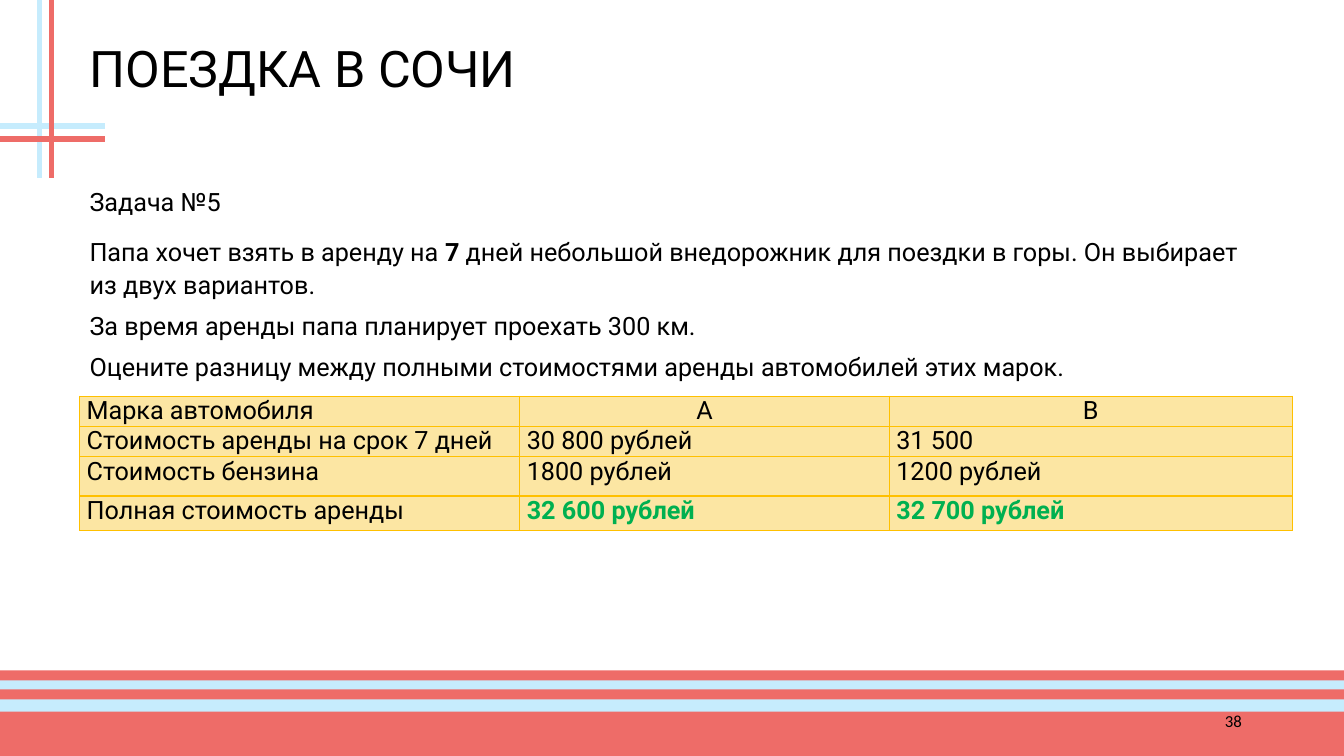
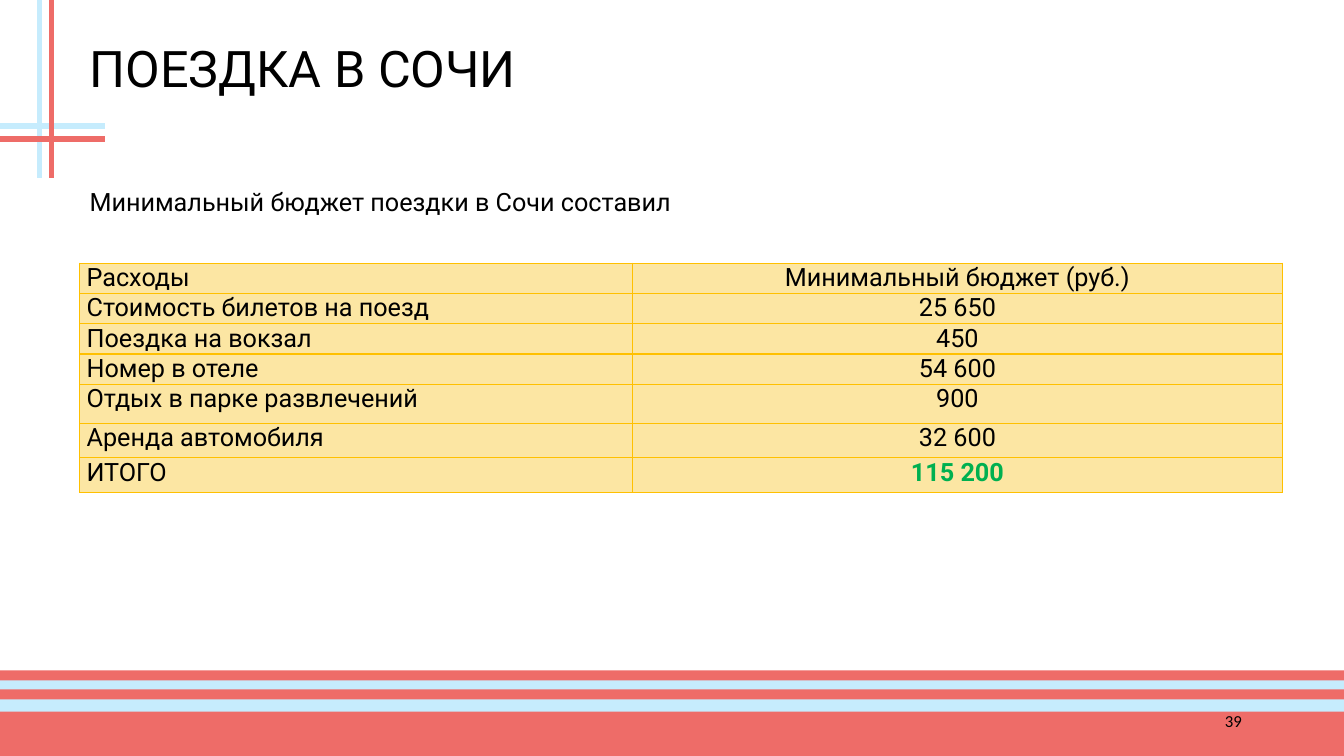
"""Builds two slides about the budget of a trip to Sochi."""
from lxml import etree
from pptx import Presentation
from pptx.dml.color import RGBColor
from pptx.enum.shapes import MSO_CONNECTOR, MSO_SHAPE
from pptx.enum.text import MSO_ANCHOR, PP_ALIGN
from pptx.oxml.ns import qn
from pptx.util import Pt

RECTANGLE = MSO_SHAPE.RECTANGLE
STRAIGHT = MSO_CONNECTOR.STRAIGHT
TOP, MIDDLE = MSO_ANCHOR.TOP, MSO_ANCHOR.MIDDLE
LEFT, CENTER, RIGHT = PP_ALIGN.LEFT, PP_ALIGN.CENTER, PP_ALIGN.RIGHT
BORDER_TAGS = ("a:lnL", "a:lnR", "a:lnT", "a:lnB")


def rgb(value):
    return RGBColor.from_string(value)


def write_text(paragraph, text, size=18, font="Roboto", color="000000", bold_color="000000",
               align=LEFT, line_spacing=1.0, before=0, after=0):
    paragraph.alignment = align
    paragraph.line_spacing = line_spacing
    paragraph.space_before, paragraph.space_after = Pt(before), Pt(after)
    for index, part in enumerate(text.split("**")):
        if part:
            bold = index % 2 == 1
            run = paragraph.add_run()
            run.text = part
            run.font.size, run.font.name, run.font.bold = Pt(size), font, bold
            run.font.color.rgb = rgb(bold_color if bold else color)


class Deck:
    CORAL, SKY = "EE6C68", "C6ECFD"
    CELL, BORDER, RESULT = "FCE6A3", "FFC000", "00B050"
    WIDTH, HEIGHT = 960, 540
    MARGIN, CONTENT_WIDTH = 56.9, 837.4

    def __init__(self):
        self.presentation = Presentation()
        self.presentation.slide_width = Pt(self.WIDTH)
        self.presentation.slide_height = Pt(self.HEIGHT)
        self.slide = None

    def new_slide(self, title, number):
        self.slide = self.presentation.slides.add_slide(self.presentation.slide_layouts[6])
        self.band(479.5, self.HEIGHT - 479.5, self.SKY)
        self.band(508.3, self.HEIGHT - 508.3, self.CORAL)
        for top in (492.5, 478.8):
            self.band(top, 7.2, self.CORAL)
        for color, x, y in ((self.SKY, 28.1, 90), (self.CORAL, 36.7, 99.4)):
            self.line(0, y, 74.9, y, color)
            self.line(x, 0, x, 127.4, color)
        self.text(678.2, 500.4, 216, 28.8, [(str(number), {})], anchor=MIDDLE,
                  size=12, font="Calibri", align=RIGHT)
        self.text(self.MARGIN, 28.1, self.CONTENT_WIDTH, 52.6, [(title, {})],
                  size=36, line_spacing=0.9)

    def band(self, top, height, color):
        shape = self.slide.shapes.add_shape(RECTANGLE, 0, Pt(top), Pt(self.WIDTH), Pt(height))
        shape.shadow.inherit = False
        shape.fill.solid()
        shape.fill.fore_color.rgb = rgb(color)
        shape.line.fill.background()

    def line(self, x1, y1, x2, y2, color):
        connector = self.slide.shapes.add_connector(STRAIGHT, Pt(x1), Pt(y1), Pt(x2), Pt(y2))
        connector.line.color.rgb = rgb(color)
        connector.line.width = Pt(4)
        properties = connector._element.find(qn("p:spPr"))
        etree.SubElement(properties, qn("a:effectLst"))

    def text(self, left, top, width, height, paragraphs, anchor=TOP, **style):
        box = self.slide.shapes.add_textbox(Pt(left), Pt(top), Pt(width), Pt(height))
        frame = box.text_frame
        frame.word_wrap = True
        frame.vertical_anchor = anchor
        for index, (content, own_style) in enumerate(paragraphs):
            paragraph = frame.add_paragraph() if index else frame.paragraphs[0]
            write_text(paragraph, content, **{**style, **own_style})

    def body(self, paragraphs):
        self.text(self.MARGIN, 127.4, self.CONTENT_WIDTH, 331.9, paragraphs, line_spacing=1.1)

    def table(self, top, widths, heights, rows, alignment):
        frame = self.slide.shapes.add_table(len(rows), len(widths), Pt(self.MARGIN), Pt(top),
                                            Pt(sum(widths)), Pt(sum(heights)))
        table = frame.table
        table.first_row = table.horz_banding = False
        for column, width in zip(table.columns, widths):
            column.width = Pt(width)
        for row_index, (row, height) in enumerate(zip(rows, heights)):
            table.rows[row_index].height = Pt(height)
            for column_index, content in enumerate(row):
                align = alignment(row_index, column_index)
                self.cell(table.cell(row_index, column_index), content, align)

    def cell(self, cell, content, align):
        cell.margin_left = cell.margin_right = Pt(5)
        cell.margin_top = cell.margin_bottom = 0
        properties = cell._tc.get_or_add_tcPr()
        for tag in BORDER_TAGS:
            border = etree.SubElement(properties, qn(tag), w=str(Pt(1)))
            fill = etree.SubElement(border, qn("a:solidFill"))
            etree.SubElement(fill, qn("a:srgbClr"), val=self.BORDER)
        cell.fill.solid()
        cell.fill.fore_color.rgb = rgb(self.CELL)
        write_text(cell.text_frame.paragraphs[0], content, align=align, bold_color=self.RESULT)


def main():
    deck = Deck()
    title = "ПОЕЗДКА В СОЧИ"
    tight = {"line_spacing": 0.9, "before": 10}

    deck.new_slide(title, 38)
    deck.body([
        ("Задача №5", {"after": 12}),
        ("Папа хочет взять в аренду на **7** дней небольшой внедорожник для поездки в горы. "
         "Он выбирает из двух вариантов.", {}),
        ("За время аренды папа планирует проехать 300 км.", tight),
        ("Оцените разницу между полными стоимостями аренды автомобилей этих марок.", tight),
    ])
    deck.table(283, (314.4, 264, 287.7), (21.1, 21.1, 28, 24.6), [
        ("Марка автомобиля", "А", "В"),
        ("Стоимость аренды на срок 7 дней", "30 800 рублей", "31 500"),
        ("Стоимость бензина", "1800 рублей", "1200 рублей"),
        ("Полная стоимость аренды", "**32 600 рублей**", "**32 700 рублей**"),
    ], lambda row, column: CENTER if row == 0 and column else LEFT)

    deck.new_slide(title, 39)
    deck.body([("Минимальный бюджет поездки в Сочи составил", {})])
    deck.table(188, (394.8, 464.4), (21.1, 21.1, 21.1, 21.1, 28, 24.6, 24.6), [
        ("Расходы", "Минимальный бюджет (руб.)"),
        ("Стоимость билетов на поезд", "25 650"),
        ("Поездка на вокзал", "450"),
        ("Номер в отеле", "54 600"),
        ("Отдых в парке развлечений", "900"),
        ("Аренда автомобиля", "32 600"),
        ("ИТОГО", "**115 200**"),
    ], lambda row, column: CENTER if column else LEFT)

    deck.presentation.save("out.pptx")


if __name__ == "__main__":
    main()
